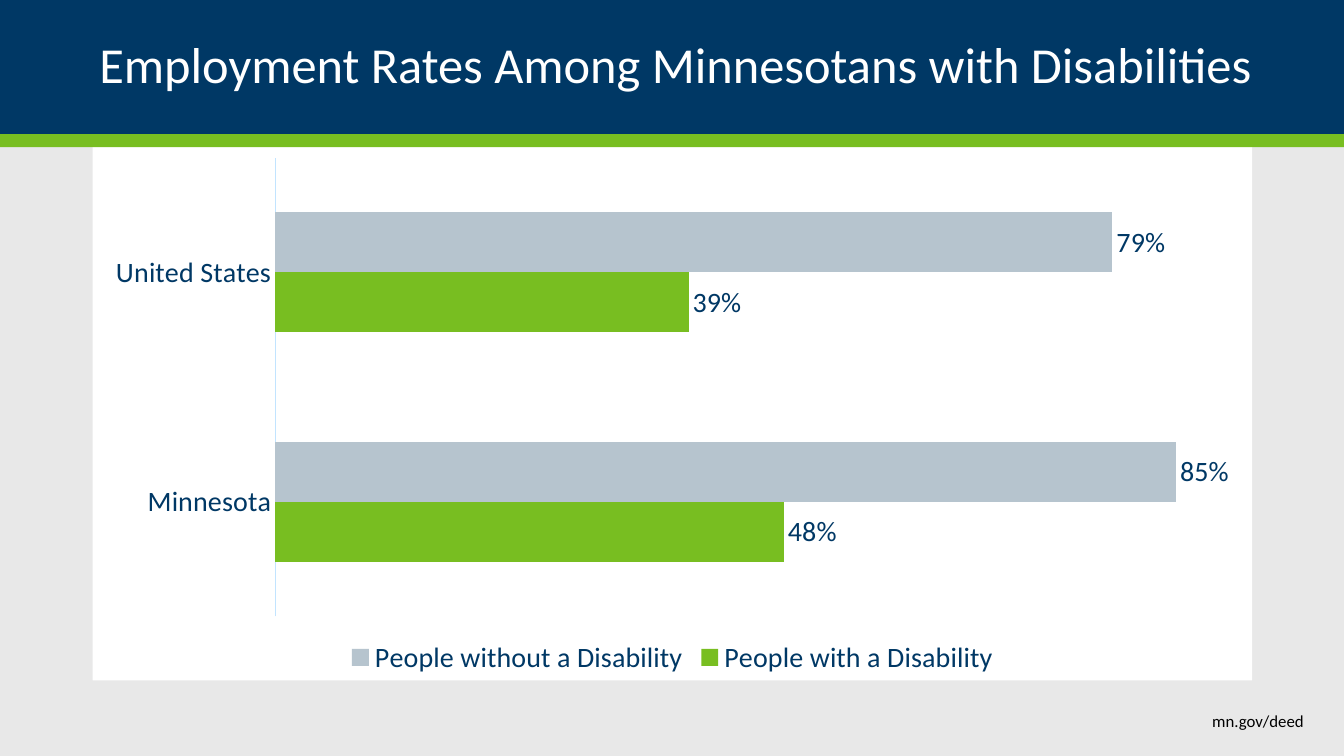
import pptx
import pptx.chart.data
import pptx.dml.color
import pptx.enum.chart
import pptx.enum.shapes
import pptx.enum.text
import pptx.util

TITLE = "Employment Rates Among Minnesotans with Disabilities"
SITE = "mn.gov/deed"
PLACES = ["Minnesota", "United States"]
RATES = [
    ("People with a Disability", (0.48, 0.39), "green"),
    ("People without a Disability", (0.85, 0.79), "steel"),
]
COLORS = {
    "navy": "003865", "green": "78BE21", "steel": "B6C4CE", "sky": "C2E4FF",
    "white": "FFFFFF", "black": "000000", "back": "E8E8E8",
}
FONT = "Calibri"
WIDE, HIGH = 13.33, 7.5
HEAD, BAND = 1.33, 0.13
SIDE = 0.92
TOP = HEAD + BAND
BODY = (SIDE, TOP, 11.5, 5.29)


def inches(box):
    return [pptx.util.Inches(n) for n in box]


def color(name):
    return pptx.dml.color.RGBColor.from_string(COLORS[name])


def paint(fill, name):
    fill.solid()
    fill.fore_color.rgb = color(name)


def style(font, size, name):
    font.name = FONT
    font.size = pptx.util.Pt(size)
    font.color.rgb = color(name)


def block(slide, box, name):
    """Add a plain filled rectangle."""
    shape = slide.shapes.add_shape(
        pptx.enum.shapes.MSO_SHAPE.RECTANGLE, *inches(box))
    shape.shadow.inherit = False
    paint(shape.fill, name)
    shape.line.fill.background()
    return shape


def write(shape, text, size, name):
    """Fill a shape with one right-aligned line, centred in height."""
    frame = shape.text_frame
    frame.word_wrap = True
    frame.vertical_anchor = pptx.enum.text.MSO_ANCHOR.MIDDLE
    line = frame.paragraphs[0]
    line.alignment = pptx.enum.text.PP_ALIGN.RIGHT
    run = line.add_run()
    run.text = text
    style(run.font, size, name)
    return frame


def plot(slide):
    """Add the bar chart of employment rates."""
    data = pptx.chart.data.CategoryChartData(number_format="0%")
    data.categories = PLACES
    for label, rates, _ in RATES:
        data.add_series(label, rates)
    chart = slide.shapes.add_chart(
        pptx.enum.chart.XL_CHART_TYPE.BAR_CLUSTERED, *inches(BODY), data).chart
    chart.has_title = False
    style(chart.font, 10, "navy")

    chart.has_legend = True
    chart.legend.position = pptx.enum.chart.XL_LEGEND_POSITION.BOTTOM
    chart.legend.include_in_layout = False
    style(chart.legend.font, 20, "navy")

    axis = chart.category_axis
    axis.major_tick_mark = pptx.enum.chart.XL_TICK_MARK.NONE
    axis.format.line.color.rgb = color("sky")
    axis.format.line.width = pptx.util.Pt(0.75)
    style(axis.tick_labels.font, 20, "navy")

    scale = chart.value_axis
    scale.minimum_scale, scale.maximum_scale = 0, 0.9
    scale.has_major_gridlines = False
    scale.visible = False

    bars = chart.plots[0]
    bars.gap_width = 182
    bars.overlap = 0
    bars.vary_by_categories = False
    for series, (_, _, name) in zip(bars.series, RATES):
        paint(series.format.fill, name)
        tags = series.data_labels
        tags.show_value = True
        tags.number_format = "0%"
        tags.number_format_is_linked = False
        tags.position = pptx.enum.chart.XL_LABEL_POSITION.OUTSIDE_END
        style(tags.font, 20, "navy")


def main():
    deck = pptx.Presentation()
    deck.slide_width, deck.slide_height = inches((WIDE, HIGH))
    slide = deck.slides.add_slide(deck.slide_layouts[5])
    paint(slide.background.fill, "back")

    head = block(slide, (0, 0, WIDE, HEAD), "navy")
    block(slide, BODY, "white")
    block(slide, (0, HEAD, WIDE, BAND), "green")

    title = slide.shapes.title
    title.left, title.top, title.width, title.height = inches(
        (SIDE, 0, BODY[2], HEAD))
    head.element.addnext(title.element)
    frame = write(title, TITLE, 36, "white")
    frame.margin_left = frame.margin_right = 0
    frame.paragraphs[0].line_spacing = 0.9

    site = slide.shapes.add_textbox(*inches((6.92, 6.95, 6.11, 0.4)))
    write(site, SITE, 12, "black")
    plot(slide)
    deck.save("out.pptx")


if __name__ == "__main__":
    main()
